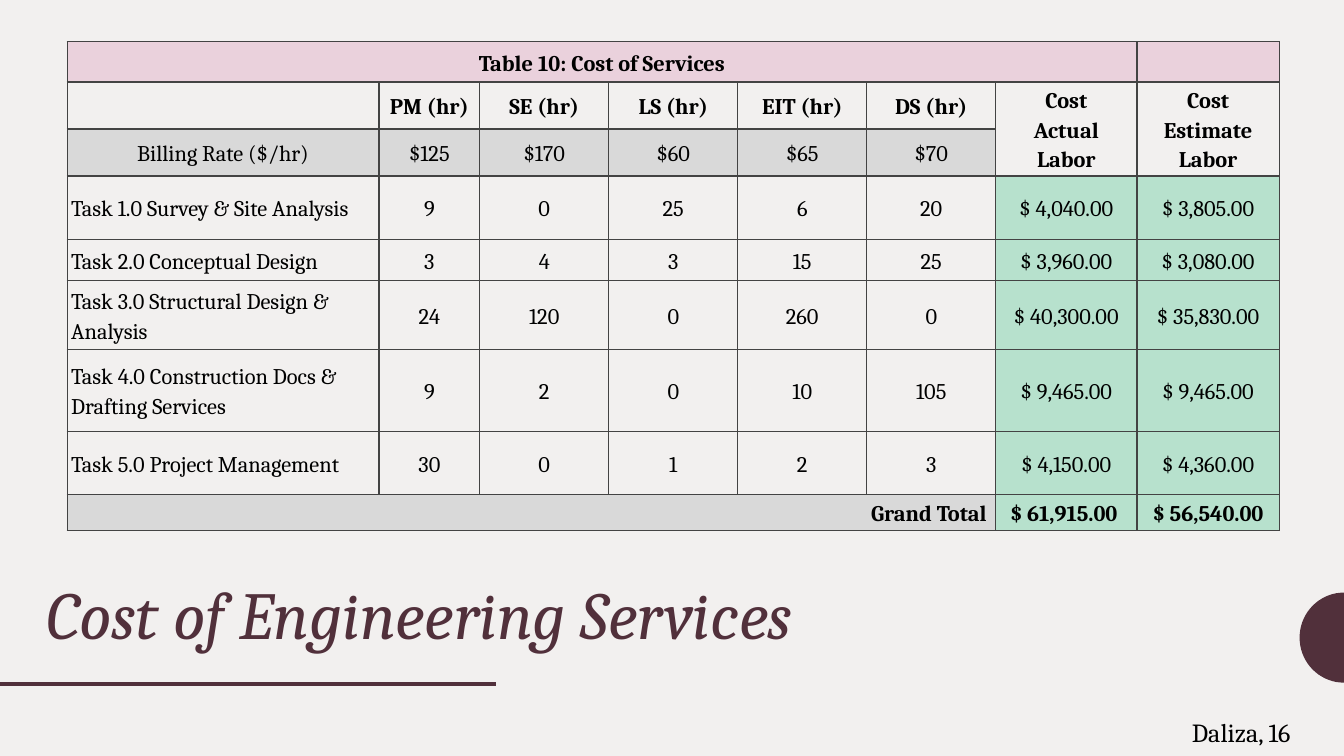
from math import cos, pi, sin

from lxml.etree import SubElement
from pptx import Presentation
from pptx.dml.color import RGBColor
from pptx.enum.shapes import MSO_CONNECTOR
from pptx.enum.text import MSO_ANCHOR, PP_ALIGN
from pptx.oxml import parse_xml
from pptx.oxml.ns import nsdecls, qn
from pptx.util import Inches, Pt

FONT = "Cambria"
BACKGROUND, PLUM, BLACK, BORDER = "F2F0EF", "51303B", "000000", "434343"
PINK, GRAY, GREEN = "EAD1DC", "D9D9D9", "B7E1CD"

COLUMN_WIDTHS = [2.32, 0.75, 0.96, 0.96, 0.96, 0.96, 1.05, 1.06]
ROW_HEIGHTS = [0.3, 0.35, 0.35, 0.47, 0.31, 0.51, 0.61, 0.47, 0.27]
COST_ROWS = [
    ["Table 10: Cost of Services"] + [""] * 7,
    ["", "PM (hr)", "SE (hr)", "LS (hr)", "EIT (hr)", "DS (hr)",
     "Cost\nActual\nLabor", "Cost Estimate Labor"],
    ["Billing Rate ($/hr)", "$125", "$170", "$60", "$65", "$70", "", ""],
    ["Task 1.0 Survey & Site Analysis", "9", "0", "25", "6", "20", "$ 4,040.00", "$ 3,805.00"],
    ["Task 2.0 Conceptual Design", "3", "4", "3", "15", "25", "$ 3,960.00", "$ 3,080.00"],
    ["Task 3.0 Structural Design & Analysis", "24", "120", "0", "260", "0",
     "$ 40,300.00", "$ 35,830.00"],
    ["Task 4.0 Construction Docs & Drafting Services", "9", "2", "0", "10", "105",
     "$ 9,465.00", "$ 9,465.00"],
    ["Task 5.0 Project Management", "30", "0", "1", "2", "3", "$ 4,150.00", "$ 4,360.00"],
    ["Grand Total "] + [""] * 5 + ["$ 61,915.00 ", "$ 56,540.00"],
]
TITLE_ROW, HEADER_ROW, RATE_ROW, TOTAL_ROW = 0, 1, 2, 8
FIRST_COST_COLUMN = 6


def color(hex_string):
    return RGBColor.from_string(hex_string)


def format_runs(paragraph, size, hex_color, bold=False, italic=False):
    for run in paragraph.runs:
        font = run.font
        font.name, font.size = FONT, Pt(size)
        font.bold, font.italic = bold, italic
        font.color.rgb = color(hex_color)


def add_label(slide, box, text, size, hex_color, italic=False, spacing=1.0,
              anchor=MSO_ANCHOR.TOP):
    text_frame = slide.shapes.add_textbox(*map(Inches, box)).text_frame
    text_frame.word_wrap = True
    text_frame.vertical_anchor = anchor
    text_frame.margin_left = text_frame.margin_right = Inches(0.1)
    text_frame.margin_top = text_frame.margin_bottom = Inches(0.1)
    text_frame.text = text
    paragraph = text_frame.paragraphs[0]
    paragraph.line_spacing = spacing
    format_runs(paragraph, size, hex_color, italic=italic)


def add_half_disc(slide, left, top, width, height, steps=36):
    """Draw a half disc whose flat side is the right edge of the box."""
    right, middle = left + width, top + height / 2
    angles = [pi * step / steps for step in range(steps + 1)]
    points = [(Inches(right - width * sin(angle)), Inches(middle - height / 2 * cos(angle)))
              for angle in angles]
    builder = slide.shapes.build_freeform(*points[0], scale=1.0)
    builder.add_line_segments(points[1:], close=True)
    shape = builder.convert_to_shape()
    shape.shadow.inherit = False
    shape.fill.solid()
    shape.fill.fore_color.rgb = color(PLUM)
    shape.line.fill.background()


def add_rule(slide, left, top, width):
    line = slide.shapes.add_connector(MSO_CONNECTOR.STRAIGHT, Inches(left), Inches(top),
                                      Inches(left + width), Inches(top))
    line.line.color.rgb = color(PLUM)
    line.line.width = Pt(2)
    SubElement(line._element.spPr, qn("a:effectLst"))


def set_borders(cell):
    properties = cell._tc.get_or_add_tcPr()
    for index, side in enumerate(("lnL", "lnR", "lnT", "lnB")):
        properties.insert(index, parse_xml(
            f'<a:{side} {nsdecls("a")} w="{Pt(0.75)}"><a:solidFill>'
            f'<a:srgbClr val="{BORDER}"/></a:solidFill></a:{side}>'))


def cell_fill(row, column):
    if row == TITLE_ROW:
        return PINK
    if row > RATE_ROW and column >= FIRST_COST_COLUMN:
        return GREEN
    if row in (RATE_ROW, TOTAL_ROW) and column < FIRST_COST_COLUMN:
        return GRAY
    return None


def cell_alignment(row, column):
    if column == 0 and row == TOTAL_ROW:
        return PP_ALIGN.RIGHT
    if column == 0 and row > RATE_ROW:
        return PP_ALIGN.LEFT
    return PP_ALIGN.CENTER


def fill_cell(cell, row, column):
    # The three-line headings only fit their two rows without a margin
    is_tall_heading = row == HEADER_ROW and column >= FIRST_COST_COLUMN
    cell.margin_left = cell.margin_right = Inches(0.03)
    cell.margin_top = cell.margin_bottom = Inches(0 if is_tall_heading else 0.02)
    cell.vertical_anchor = MSO_ANCHOR.MIDDLE
    hex_fill = cell_fill(row, column)
    if hex_fill:
        cell.fill.solid()
        cell.fill.fore_color.rgb = color(hex_fill)
    else:
        cell.fill.background()
    set_borders(cell)
    cell.text_frame.text = COST_ROWS[row][column]
    for paragraph in cell.text_frame.paragraphs:
        paragraph.alignment = cell_alignment(row, column)
        paragraph.line_spacing = 1.15
        format_runs(paragraph, 12, BLACK, bold=row in (TITLE_ROW, HEADER_ROW, TOTAL_ROW))
        if not paragraph.runs:
            # Keeps an empty cell from stretching its row
            SubElement(paragraph._p, qn("a:endParaRPr"), sz="1200")


def add_cost_table(slide, left, top):
    frame = slide.shapes.add_table(
        len(ROW_HEIGHTS), len(COLUMN_WIDTHS), Inches(left), Inches(top),
        Inches(sum(COLUMN_WIDTHS)), Inches(sum(ROW_HEIGHTS)))
    table = frame.table
    table.first_row = table.horz_banding = False
    for column, width in zip(table.columns, COLUMN_WIDTHS):
        column.width = Inches(width)
    for row, height in zip(table.rows, ROW_HEIGHTS):
        row.height = Inches(height)
    for row in range(len(ROW_HEIGHTS)):
        for column in range(len(COLUMN_WIDTHS)):
            fill_cell(table.cell(row, column), row, column)
    table.cell(TITLE_ROW, 0).merge(table.cell(TITLE_ROW, 6))
    table.cell(TOTAL_ROW, 0).merge(table.cell(TOTAL_ROW, 5))
    for column in (6, 7):
        table.cell(HEADER_ROW, column).merge(table.cell(RATE_ROW, column))


def main():
    presentation = Presentation()
    presentation.slide_width = Inches(10)
    presentation.slide_height = Inches(10 * 9 / 16)
    slide = presentation.slides.add_slide(presentation.slide_layouts[6])
    slide.background.fill.solid()
    slide.background.fill.fore_color.rgb = color(BACKGROUND)
    add_half_disc(slide, 9.67, 4.41, 0.33, 0.67)
    add_rule(slide, 0, 5.09, 3.69)
    add_label(slide, (0.25, 4.23, 9.13, 0.85), "Cost of Engineering Services", 36, PLUM,
              italic=True, spacing=0.9)
    add_cost_table(slide, 0.5, 0.31)
    add_label(slide, (8.77, 5.27, 1.23, 0.35), "Daliza, 16", 14, BLACK,
              anchor=MSO_ANCHOR.MIDDLE)
    presentation.save("out.pptx")


if __name__ == "__main__":
    main()
